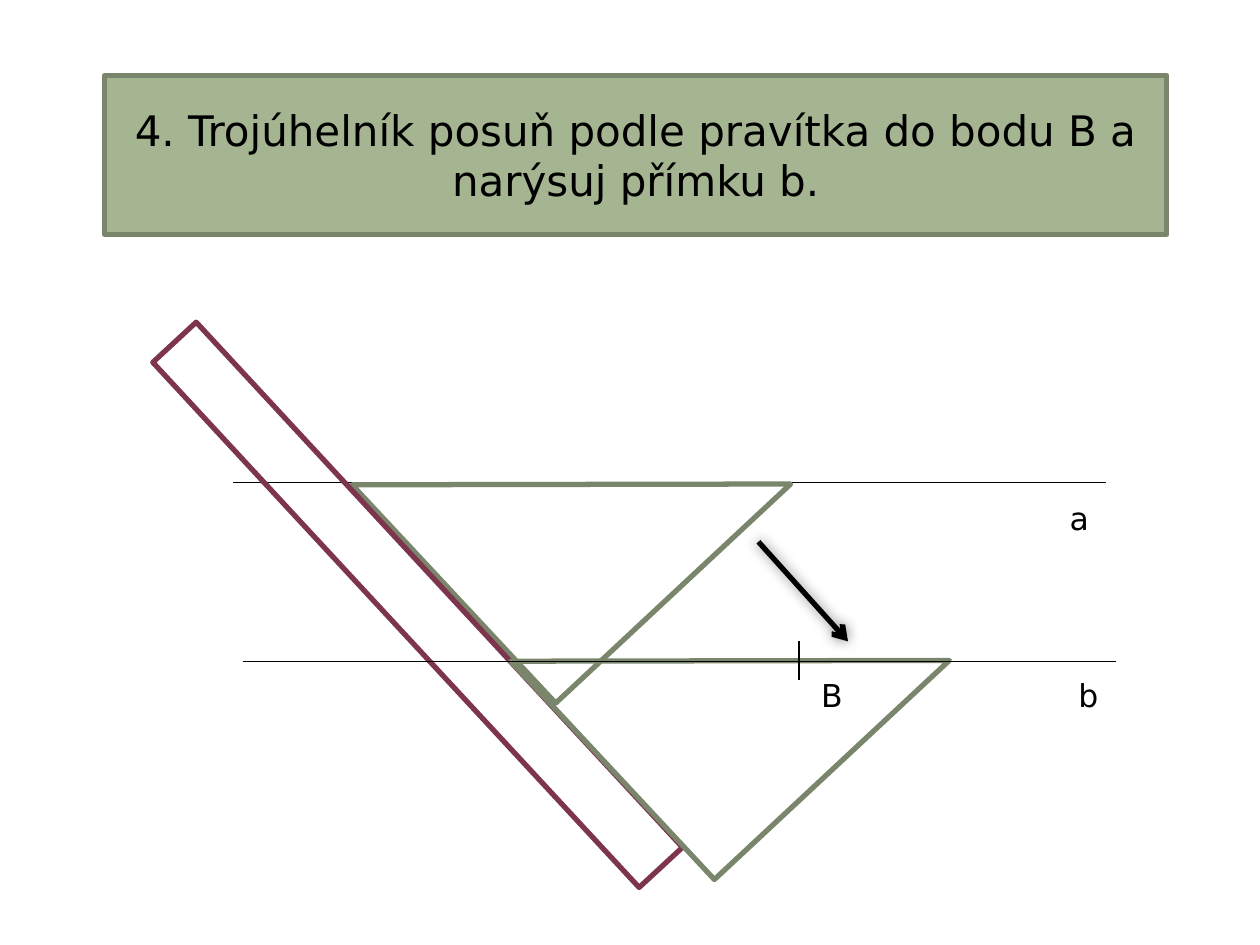
from lxml.etree import SubElement
from pptx import Presentation
from pptx.dml.color import RGBColor
from pptx.enum.shapes import MSO_CONNECTOR, MSO_SHAPE
from pptx.enum.text import MSO_ANCHOR, MSO_AUTO_SIZE, PP_ALIGN
from pptx.oxml.ns import qn
from pptx.util import Pt

BLACK = RGBColor(0x00, 0x00, 0x00)
SAGE = RGBColor(0xA5, 0xB5, 0x92)
DARK_SAGE = RGBColor(0x7A, 0x86, 0x6C)
PLUM = RGBColor(0x7C, 0x35, 0x4D)
FONT = "DejaVu Sans"
SLIDE_OFFSET = (90.7, 100.8)


def style_text(paragraph, size):
    for run in paragraph.runs:
        run.font.name = FONT
        run.font.size = Pt(size)
        run.font.color.rgb = BLACK


def add_outline(slide, kind, box, color, rotation=0):
    shape = slide.shapes.add_shape(kind, *map(Pt, box))
    shape.shadow.inherit = False
    shape.fill.background()
    shape.line.color.rgb = color
    shape.line.width = Pt(3)
    shape.rotation = rotation
    return shape


def add_title(slide, text):
    shape = add_outline(slide, MSO_SHAPE.RECTANGLE, (59.8, 43.2, 607, 90.7), DARK_SAGE)
    shape.fill.solid()
    shape.fill.fore_color.rgb = SAGE
    text_frame = shape.text_frame
    text_frame.text = text
    text_frame.word_wrap = True
    text_frame.vertical_anchor = MSO_ANCHOR.MIDDLE
    paragraph = text_frame.paragraphs[0]
    paragraph.alignment = PP_ALIGN.CENTER
    style_text(paragraph, 24)


def add_set_square(slide, left, top):
    box = (left, top, 183.6, 170.6)
    add_outline(slide, MSO_SHAPE.RIGHT_TRIANGLE, box, DARK_SAGE, 317)


def add_line(slide, start, end, width=1):
    connector = slide.shapes.add_connector(
        MSO_CONNECTOR.STRAIGHT, *map(Pt, (*start, *end))
    )
    connector.line.color.rgb = BLACK
    connector.line.width = Pt(width)
    SubElement(connector._element.spPr, qn("a:effectLst"))
    return connector


def add_shift_arrow(slide, start, end):
    connector = add_line(slide, start, end, 3)
    SubElement(connector.line._get_or_add_ln(), qn("a:tailEnd"), type="arrow")
    effects = connector._element.spPr.find(qn("a:effectLst"))
    shadow = SubElement(
        effects, qn("a:outerShdw"), blurRad=str(Pt(7.5)), dist="0", dir="0"
    )
    color = SubElement(shadow, qn("a:srgbClr"), val=str(BLACK))
    SubElement(color, qn("a:alpha"), val="50000")


def add_label(slide, text, left, top, width):
    box = slide.shapes.add_textbox(Pt(left), Pt(top), Pt(width), Pt(29))
    text_frame = box.text_frame
    text_frame.text = text
    text_frame.word_wrap = True
    text_frame.auto_size = MSO_AUTO_SIZE.SHAPE_TO_FIT_TEXT
    style_text(text_frame.paragraphs[0], 18)


def main():
    """Build the slide about drawing a parallel line with a set square."""
    presentation = Presentation()
    presentation.slide_width = Pt(720)
    presentation.slide_height = Pt(540)
    slide = presentation.slides.add_slide(presentation.slide_layouts[6])

    add_title(slide, "4. Trojúhelník posuň podle pravítka do bodu B a narýsuj přímku b.")
    add_line(slide, (133.2, 275.8), (632.2, 275.8))
    add_label(slide, "a", 604.1, 281.5, 45.4)

    left, top = 234.7, 191.5
    add_set_square(slide, left, top)
    ruler = (221.8, 141.1, 33.8, 409)
    add_outline(slide, MSO_SHAPE.RECTANGLE, ruler, PLUM, 317.2)
    add_set_square(slide, left + SLIDE_OFFSET[0], top + SLIDE_OFFSET[1])
    add_shift_arrow(slide, (433.4, 309.6), (484.6, 366.5))

    add_line(slide, (139, 378), (638, 378))
    add_label(slide, "b", 609.1, 383, 45.4)
    add_line(slide, (456.5, 366.5), (456.5, 388.8))
    add_line(slide, (439.2, 378), (473, 378))
    add_label(slide, "B", 462.2, 383, 33.8)

    presentation.save("out.pptx")


if __name__ == "__main__":
    main()
